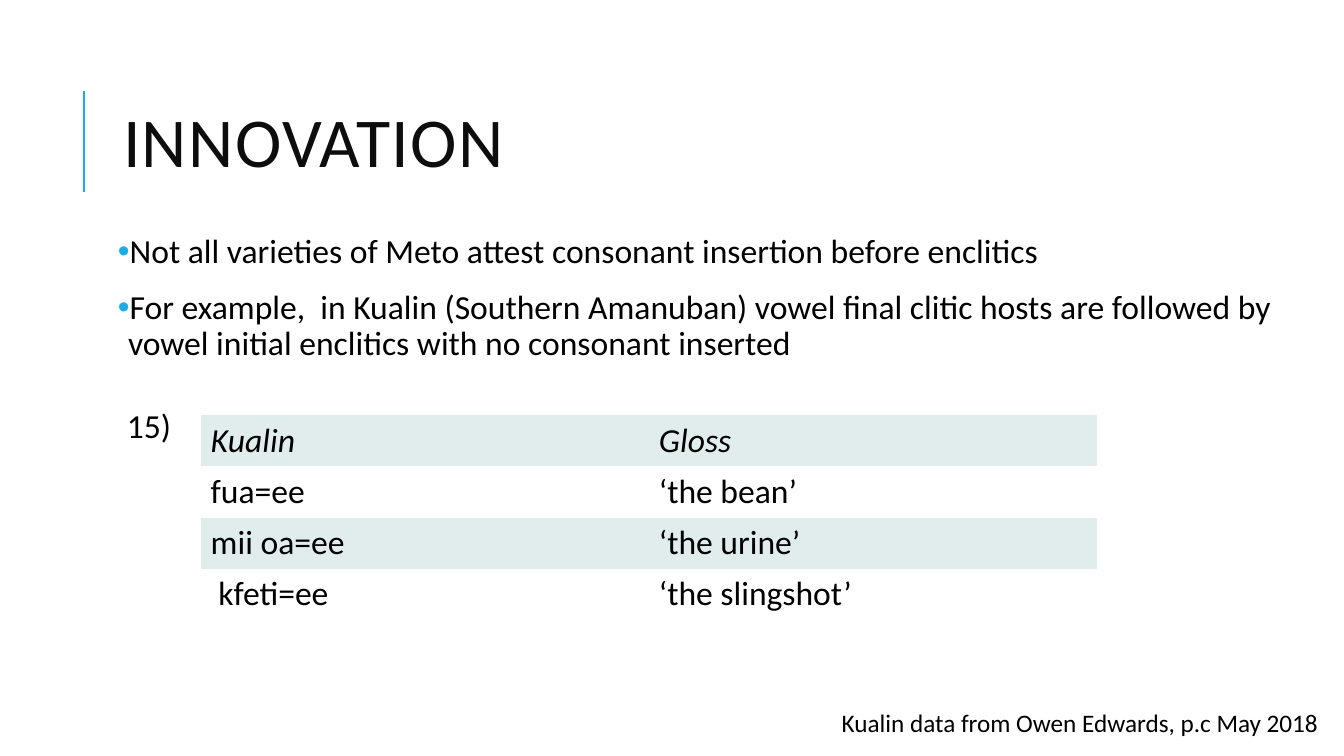
from dataclasses import dataclass

from lxml.etree import SubElement
from pptx import Presentation
from pptx.dml.color import RGBColor as RGB
from pptx.enum.shapes import MSO_CONNECTOR as Link
from pptx.enum.text import MSO_ANCHOR as Anchor, MSO_AUTO_SIZE as Auto, PP_ALIGN as Align
from pptx.oxml.ns import qn
from pptx.util import Pt

PX = 9144  # one hundredth of an inch
PLAIN = "{2D5ABB26-0587-4C30-8999-92F81FD0307C}"  # table style without borders


@dataclass(frozen=True)
class Theme:
    face: str = "Calibri"
    dot: str = "Arial"
    ink: str = "000000"
    head: str = "0D0D0D"
    accent: str = "1CADE4"
    band: str = "E0EDEC"
    white: str = "FFFFFF"
    title: int = 50
    body: int = 24
    note: int = 18


THEME = Theme()
POINTS = [
    "Not all varieties of Meto attest consonant insertion before enclitics",
    "For example,  in Kualin (Southern Amanuban) vowel final clitic hosts are followed by \v"
    "vowel initial enclitics with no consonant inserted",
]
WORDS = [
    ("Kualin", "Gloss"),
    ("fua=ee", "‘the bean’"),
    ("mii oa=ee", "‘the urine’"),
    (" kfeti=ee", "‘the slingshot’"),
]


def px(*sizes):
    return [size * PX for size in sizes]


def style(font, size, color=THEME.ink, **more):
    for key, value in {"name": THEME.face, "size": Pt(size), **more}.items():
        setattr(font, key, value)
    font.color.rgb = RGB.from_string(color)


def add_text(slide, box, text, size, wrap=True):
    frame = slide.shapes.add_textbox(*px(*box)).text_frame
    frame.word_wrap = wrap
    frame.auto_size = Auto.SHAPE_TO_FIT_TEXT
    frame.text = text
    style(frame.paragraphs[0].font, size)


def add_title(slide, box, text):
    left, top, _, _ = box
    x, y = left - 29, top + 26
    rule = slide.shapes.add_connector(Link.STRAIGHT, *px(x, y + 100, x, y))
    rule.line.color.rgb = RGB.from_string(THEME.accent)
    rule.line.width = Pt(1.5)
    SubElement(rule._element.spPr, qn("a:effectLst"))

    title = slide.shapes.title
    for key, value in zip(("left", "top", "width", "height"), px(*box)):
        setattr(title, key, value)
    frame = title.text_frame
    frame.text = text
    frame.auto_size = Auto.NONE
    frame.vertical_anchor = Anchor.MIDDLE
    para = frame.paragraphs[0]
    para.alignment = Align.LEFT
    para.line_spacing = 0.8
    font = para.runs[0].font
    style(font, THEME.title, THEME.head)
    font._element.set("spc", "100")


def add_bullet(para):
    props = para._p.get_or_add_pPr()
    props.set("marL", str(10 * PX))
    props.set("indent", str(-10 * PX))
    color = SubElement(props, qn("a:buClr"))
    SubElement(color, qn("a:srgbClr"), val=THEME.accent)
    SubElement(props, qn("a:buFont"), typeface=THEME.dot)
    SubElement(props, qn("a:buChar"), char="•")


def add_points(slide, box, points):
    frame = slide.shapes.add_textbox(*px(*box)).text_frame
    frame.word_wrap = True
    for side in ("left", "top", "right", "bottom"):
        setattr(frame, f"margin_{side}", 5 * PX)
    for i, text in enumerate(points):
        para = frame.add_paragraph() if i else frame.paragraphs[0]
        para.text = text
        add_bullet(para)
        para.line_spacing = 0.9
        para.space_before = Pt(12 if i else 0)
        para.space_after = Pt(2)
        style(para.font, THEME.body)


def add_words(slide, box, words):
    left, top, _, _ = box
    add_text(slide, (left - 83, top - 15, 72, 50), "15)", THEME.body)
    table = slide.shapes.add_table(len(words), len(words[0]), *px(*box)).table
    table._tbl.tblPr.find(qn("a:tableStyleId")).text = PLAIN
    for r, row in enumerate(words):
        for c, text in enumerate(row):
            cell = table.cell(r, c)
            cell.text = text
            cell.fill.solid()
            cell.fill.fore_color.rgb = RGB.from_string(THEME.white if r % 2 else THEME.band)
            style(cell.text_frame.paragraphs[0].runs[0].font, THEME.body, italic=r == 0)


def main():
    deck = Presentation()
    deck.slide_width, deck.slide_height = px(1333, 750)
    slide = deck.slides.add_slide(deck.slide_layouts[5])
    add_title(slide, (112, 64, 1063, 164), "INNOVATION")
    add_points(slide, (112, 228, 1194, 164), POINTS)
    add_words(slide, (199, 412, 889, 203), WORDS)
    add_text(slide, (825, 697, 494, 40), "Kualin data from Owen Edwards, p.c May 2018",
             THEME.note, wrap=False)
    deck.save("out.pptx")


if __name__ == "__main__":
    main()
